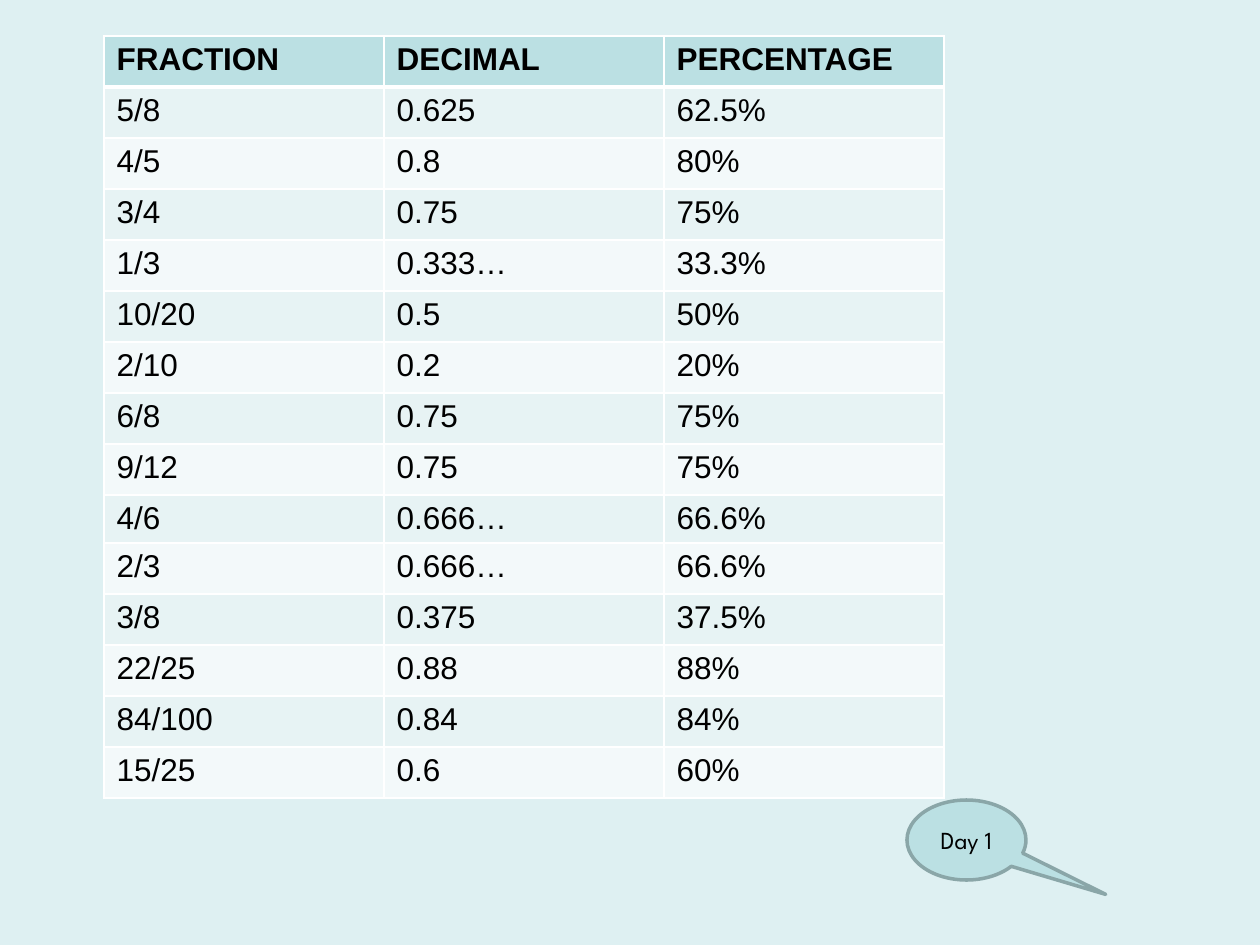
from pptx import Presentation
from pptx import util as u
from pptx.dml.color import RGBColor
from pptx.enum import shapes, text
from pptx.oxml import parse_xml
from pptx.oxml.ns import nsdecls

# Content
HEAD = ("FRACTION", "DECIMAL", "PERCENTAGE")
ROWS = [
    ("5/8", "0.625", "62.5%"),
    ("4/5", "0.8", "80%"),
    ("3/4", "0.75", "75%"),
    ("1/3", "0.333…", "33.3%"),
    ("10/20", "0.5", "50%"),
    ("2/10", "0.2", "20%"),
    ("6/8", "0.75", "75%"),
    ("9/12", "0.75", "75%"),
    ("4/6", "0.666…", "66.6%"),
    ("2/3", "0.666…", "66.6%"),
    ("3/8", "0.375", "37.5%"),
    ("22/25", "0.88", "88%"),
    ("84/100", "0.84", "84%"),
    ("15/25", "0.6", "60%"),
]
DAY = "Day 1"

COLORS = {
    "back": "DEF0F2", "head": "BBE0E3", "odd": "E7F3F4", "even": "F3F9FA",
    "edge": "FFFFFF", "line": "8AA6A8", "ink": "000000",
}
LEFT, TOP, COL, ROW = 104, 36, 280, 51
SHORT, LOW = 9, 47  # the one lower row and its height


def px(n):
    return u.Emu(n * 914400 // 126)


def color(name):
    return RGBColor.from_string(COLORS[name])


def paint(part, name):
    part.fill.solid()
    part.fill.fore_color.rgb = color(name)


def style(frame, font, size, bold=False):
    for para in frame.paragraphs:
        for run in para.runs:
            run.font.name = font
            run.font.size = u.Pt(size)
            run.font.bold = bold
            run.font.color.rgb = color("ink")


def border(cell, wide):
    """Draw the four edges; wide names the edges that are 3 pt."""
    props = cell._tc.get_or_add_tcPr()
    for spot, side in enumerate("LRTB"):
        width = u.Pt(3 if side in wide else 1)
        props.insert(spot, parse_xml(
            f'<a:ln{side} {nsdecls("a")} w="{width}"><a:solidFill>'
            f'<a:srgbClr val="{COLORS["edge"]}"/></a:solidFill></a:ln{side}>'))


prs = Presentation()
prs.slide_width, prs.slide_height = px(1260), px(945)
slide = prs.slides.add_slide(prs.slide_layouts[6])
paint(slide.background, "back")

# Table of equal values
data = [HEAD] + ROWS
high = [LOW if r == SHORT else ROW for r in range(len(data))]
grid = slide.shapes.add_table(
    len(data), len(HEAD), px(LEFT), px(TOP),
    px(COL * len(HEAD)), px(sum(high))).table
for col in grid.columns:
    col.width = px(COL)
for r, words in enumerate(data):
    grid.rows[r].height = px(high[r])
    fill = "head" if r == 0 else "odd" if r % 2 else "even"
    wide = {0: "B", 1: "T"}.get(r, "")
    for c, word in enumerate(words):
        cell = grid.cell(r, c)
        cell.text_frame.text = word
        style(cell.text_frame, "Arial", 18, r == 0)
        paint(cell, fill)
        border(cell, wide)

# Callout with the day
call = slide.shapes.add_shape(
    shapes.MSO_SHAPE.OVAL_CALLOUT, px(907), px(800), px(119), px(80))
call.adjustments[0], call.adjustments[1] = 1.17, 0.68
call.shadow.inherit = False
paint(call, "head")
call.line.color.rgb = color("line")
call.line.width = u.Pt(2)
frame = call.text_frame
frame.text = DAY
frame.vertical_anchor = text.MSO_ANCHOR.MIDDLE
frame.paragraphs[0].alignment = text.PP_ALIGN.CENTER
style(frame, "League Spartan", 14)

prs.save("out.pptx")
